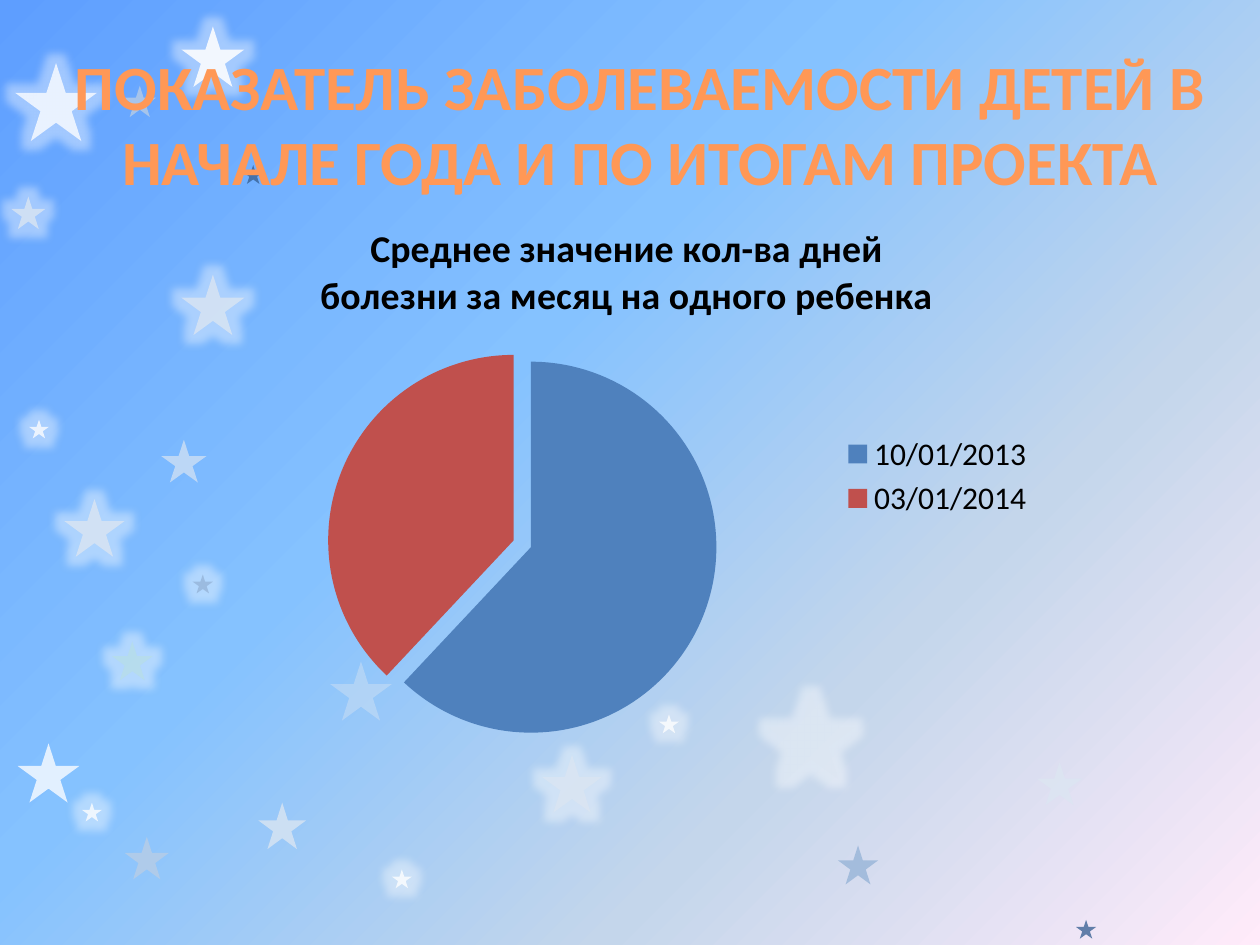
from typing import NamedTuple

from lxml import etree
from pptx import Presentation
from pptx import util as u
from pptx.chart.data import CategoryChartData
from pptx.dml.color import RGBColor
from pptx.enum import chart as charts, shapes, text
from pptx.oxml import ns

FONT = "Calibri"
TITLE = "ПОКАЗАТЕЛЬ ЗАБОЛЕВАЕМОСТИ ДЕТЕЙ В НАЧАЛЕ ГОДА И ПО ИТОГАМ ПРОЕКТА"
CHART_TITLE = "Среднее значение кол-ва дней болезни за месяц на одного ребенка"
SKY = [(0, "5E9EFF"), (40, "85C2FF"), (70, "C4D6EB"), (100, "FFEBFA")]
ORANGE = [(0, "9D4700"), (78, "FF9856"), (100, "FFF5F1")]
SLICES = {"10/01/2013": (62, "4F81BD"), "03/01/2014": (38, "C0504D")}


class Star(NamedTuple):
    left: float
    top: float
    width: float
    height: float
    color: str = "FFFFFF"
    opacity: int = 77
    glow: bool = True


STARS = [
    Star(0.12, 0.5, 0.65, 0.62),
    Star(6.1, 5.52, 0.68, 0.66, "DCE6F2", 46),
    Star(0.14, 5.9, 0.49, 0.47, glow=False),
    Star(2.62, 5.25, 0.49, 0.47, "DCE6F2", 40, False),
    Star(1.44, 0.21, 0.5, 0.48, opacity=86),
    Star(0.09, 1.56, 0.27, 0.26, "DCE6F2"),
    Star(1.44, 2.18, 0.5, 0.48, "DCE6F2"),
    Star(6.65, 6.71, 0.32, 0.31, "95B3D7", glow=False),
    Star(0.51, 3.96, 0.48, 0.46, "DCE6F2"),
    Star(2.05, 6.37, 0.38, 0.37, "DCE6F2", glow=False),
    Star(0.99, 6.64, 0.35, 0.34, "B9CDE5", glow=False),
    Star(1.28, 3.49, 0.36, 0.34, "DCE6F2", 68, False),
    Star(0.98, 0.68, 0.26, 0.25, "B9CDE5", glow=False),
    Star(0.89, 5.09, 0.32, 0.31, "B7DEE8"),
    Star(3.11, 6.9, 0.16, 0.15),
    Star(1.93, 1.31, 0.16, 0.15, "376092", glow=False),
    Star(1.53, 4.56, 0.16, 0.15, "95B3D7"),
    Star(0.65, 6.37, 0.16, 0.15),
    Star(5.23, 5.67, 0.16, 0.15),
    Star(0.23, 3.33, 0.16, 0.15),
    Star(4.3, 5.99, 0.48, 0.46, "DCE6F2", 70),
    Star(8.23, 6.05, 0.36, 0.34, "DCE6F2", glow=False),
    Star(8.54, 7.3, 0.16, 0.15, "376092", glow=False),
]


def paint(color_format, color: str) -> None:
    color_format.rgb = RGBColor.from_string(color)


def add_child(parent, tag: str, **attributes: str):
    return etree.SubElement(parent, ns.qn(tag), attributes)


def set_stops(gradient, stops: list[tuple[int, str]]) -> None:
    stop_list = gradient.find(ns.qn("a:gsLst"))
    for stop in list(stop_list):
        stop_list.remove(stop)
    for position, color in stops:
        stop = add_child(stop_list, "a:gs", pos=str(position * 1000))
        add_child(stop, "a:srgbClr", val=color)


def set_background(slide) -> None:
    slide.background.fill.gradient()
    gradient = next(slide.element.iter(ns.qn("a:gradFill")))
    set_stops(gradient, SKY)
    gradient.remove(gradient.find(ns.qn("a:lin")))
    circle = add_child(gradient, "a:path", path="circle")
    add_child(circle, "a:fillToRect", r="100000", b="100000")


def add_star(slide, star: Star) -> None:
    box = [u.Inches(length) for length in star[:4]]
    shape = slide.shapes.add_shape(shapes.MSO_SHAPE.STAR_5_POINT, *box)
    shape.shadow.inherit = False
    shape.line.fill.background()
    shape.fill.solid()
    paint(shape.fill.fore_color, star.color)
    fill_color = next(shape.element.spPr.iter(ns.qn("a:srgbClr")))
    add_child(fill_color, "a:alpha", val=str(star.opacity * 1000))
    if star.glow:
        effects = shape.element.spPr.find(ns.qn("a:effectLst"))
        glow = add_child(effects, "a:glow", rad=str(u.Inches(0.14)))
        add_child(add_child(glow, "a:srgbClr", val="FFFFFF"), "a:alpha", val="40000")


def add_title(slide) -> None:
    shape = slide.shapes.add_textbox(
        u.Inches(0.47), u.Inches(0.31), u.Inches(9.22), u.Inches(1.33))
    frame = shape.text_frame
    frame.word_wrap = True
    frame.vertical_anchor = text.MSO_ANCHOR.MIDDLE
    paragraph = frame.paragraphs[0]
    paragraph.alignment = text.PP_ALIGN.CENTER
    run = paragraph.add_run()
    run.text = TITLE
    run.font.name, run.font.size, run.font.bold = FONT, u.Pt(36), True
    run.font.fill.gradient()
    run.font.fill.gradient_angle = 270
    set_stops(next(shape.element.iter(ns.qn("a:gradFill"))), ORANGE)


def add_pie(slide) -> None:
    data = CategoryChartData()
    data.categories = list(SLICES)
    data.add_series(CHART_TITLE, [value for value, _ in SLICES.values()])
    chart = slide.shapes.add_chart(
        charts.XL_CHART_TYPE.PIE, u.Inches(1.64), u.Inches(1.56),
        u.Inches(6.67), u.Inches(4.44), data).chart
    chart.font.name, chart.font.size = FONT, u.Pt(18)
    paint(chart.font.color, "000000")

    chart.has_title = True
    run = chart.chart_title.text_frame.paragraphs[0].add_run()
    run.text = CHART_TITLE
    run.font.name, run.font.size, run.font.bold = FONT, u.Pt(21.6), True
    paint(run.font.color, "000000")
    chart.has_legend = True
    chart.legend.position = charts.XL_LEGEND_POSITION.RIGHT
    chart.legend.include_in_layout = False

    plot = chart.plots[0]
    plot.vary_by_categories = True
    series = plot.series[0]
    explosion = etree.Element(ns.qn("c:explosion"), val="5")
    next(chart.element.iter(ns.qn("c:ser"))).find(ns.qn("c:tx")).addnext(explosion)
    for index, (_, color) in enumerate(SLICES.values()):
        point = series.points[index]
        point.format.fill.solid()
        paint(point.format.fill.fore_color, color)
        explosion_copy = etree.Element(ns.qn("c:explosion"), val="5")
        point_element = list(chart.element.iter(ns.qn("c:dPt")))[index]
        point_element.find(ns.qn("c:spPr")).addprevious(explosion_copy)


def main() -> None:
    """Build the slide on children's sickness rates before and after the project."""
    presentation = Presentation()
    presentation.slide_width, presentation.slide_height = u.Inches(10), u.Inches(7.5)
    slide = presentation.slides.add_slide(presentation.slide_layouts[6])
    set_background(slide)
    for star in STARS:
        add_star(slide, star)
    add_title(slide)
    add_pie(slide)
    presentation.save("out.pptx")


if __name__ == "__main__":
    main()
